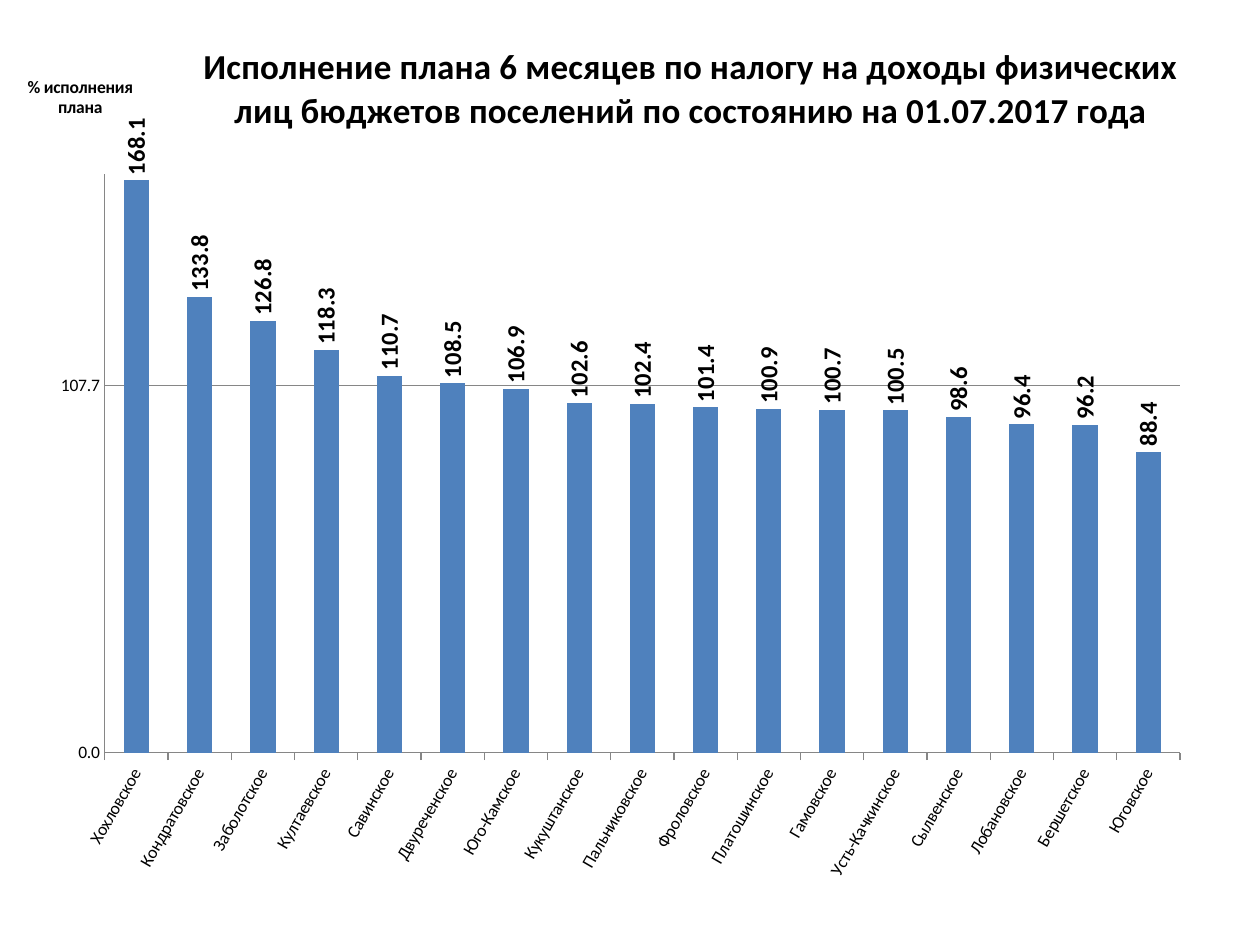
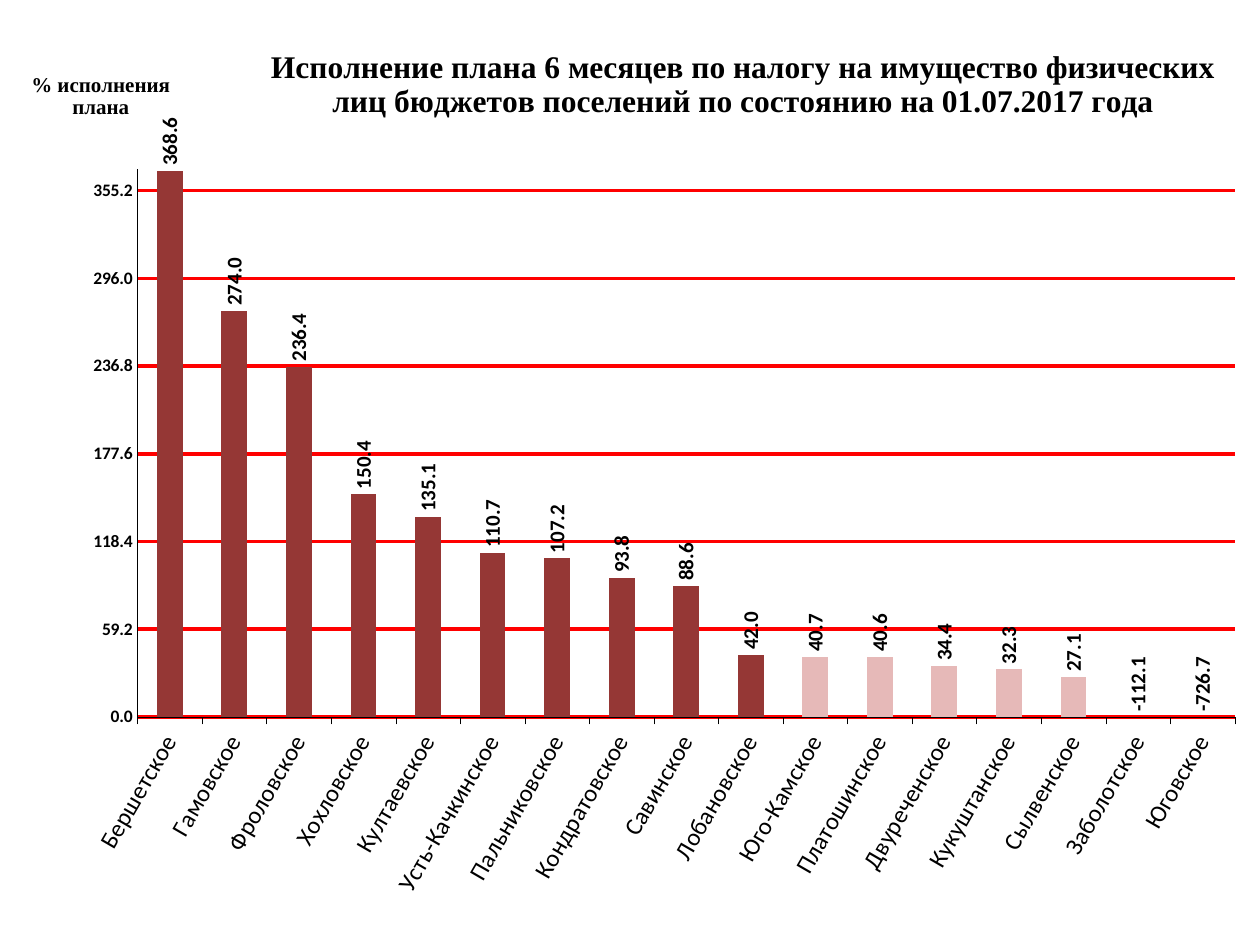
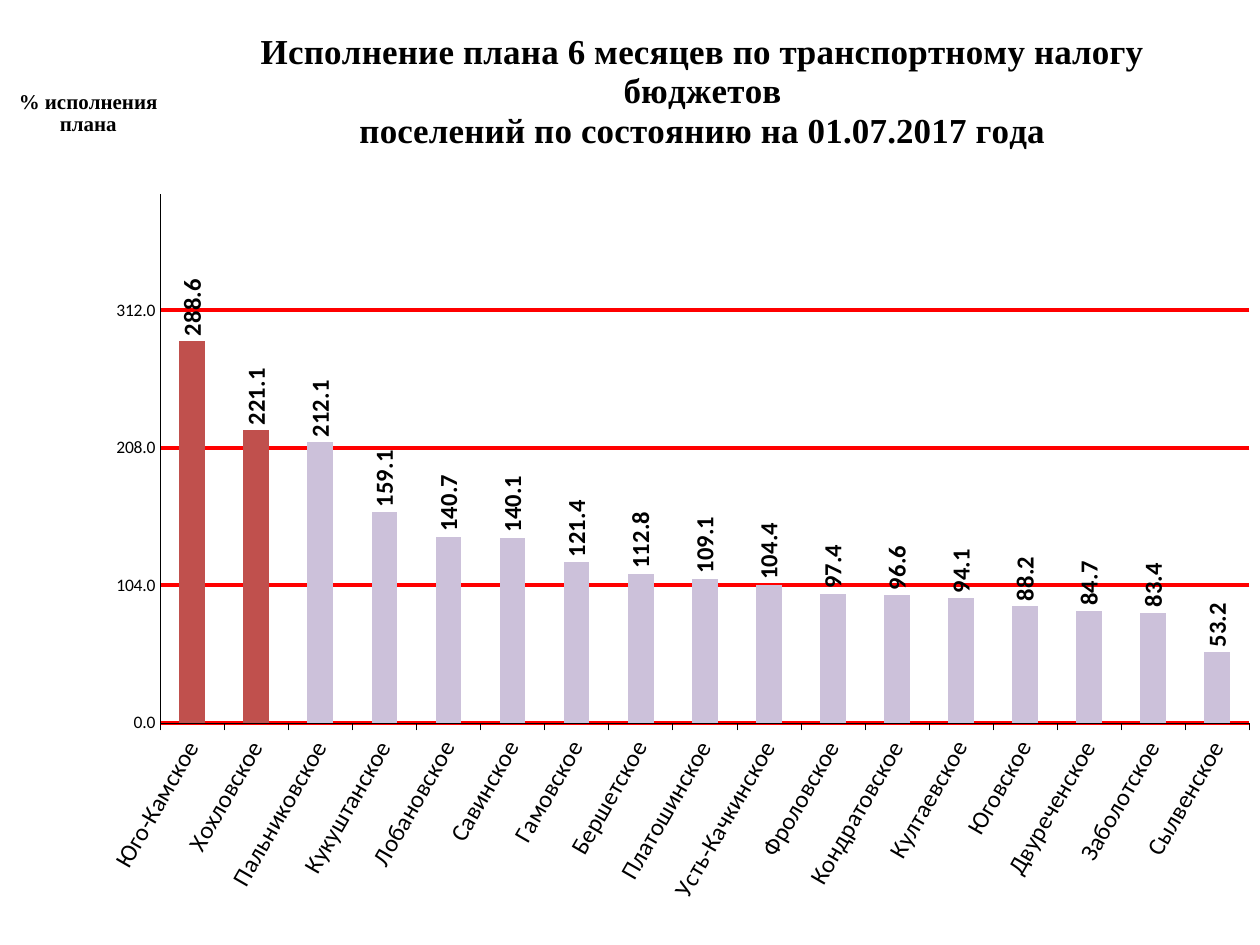
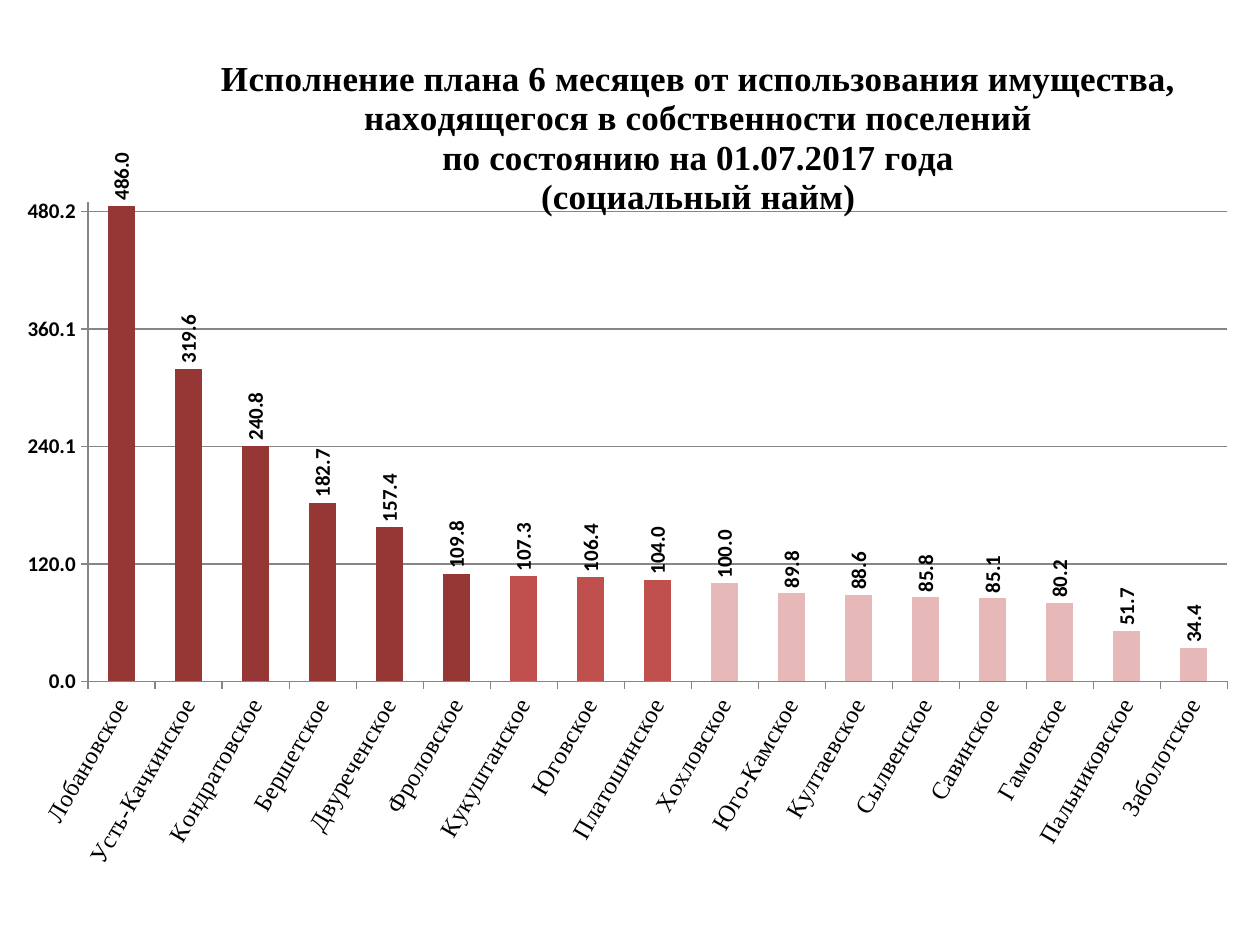
import pptx
import pptx.chart.data
import pptx.dml.color
import pptx.enum.chart
import pptx.oxml
import pptx.util
from dataclasses import dataclass
from itertools import chain, repeat
from typing import Optional

RGB = pptx.dml.color.RGBColor
Pt = pptx.util.Pt
Inches = pptx.util.Inches
Kind = pptx.enum.chart.XL_CHART_TYPE
Tick = pptx.enum.chart.XL_TICK_MARK
Side = pptx.enum.chart.XL_TICK_LABEL_POSITION
Spot = pptx.enum.chart.XL_LABEL_POSITION

BLACK = RGB(0, 0, 0)
GREY = RGB(0x86, 0x86, 0x86)
RED = RGB(0xFF, 0, 0)
BLUE = RGB(0x4F, 0x81, 0xBD)
DARK = RGB(0x95, 0x37, 0x35)
BRICK = RGB(0xC0, 0x50, 0x4D)
PINK = RGB(0xE6, 0xB9, 0xB8)
LILAC = RGB(0xCC, 0xC1, 0xDA)

SANS = "Calibri"
SERIF = "Times New Roman"
WIDE, HIGH = Inches(10), Inches(7.5)
UPRIGHT, SLANT, LEVEL = -90, -60, 0
UNIT = "% исполнения\nплана"


@dataclass(frozen=True)
class Head:
    """Text with its top left corner in percent of the chart."""
    text: str
    spot: tuple[float, float]
    size: float
    font: str = SERIF


@dataclass(frozen=True)
class Rule:
    """Colour and width in points of a line."""
    color: RGB = GREY
    width: float = 0.75


@dataclass(frozen=True)
class Graph:
    """One slide; box is in percent of the slide, plot in percent of the chart."""
    box: tuple[float, float, float, float]
    plot: tuple[float, float, float, float]
    title: Head
    names: str
    vals: tuple[float, ...]
    shades: tuple[tuple[int, RGB], ...]
    top: float
    step: float
    unit: Optional[Head] = None
    axis: Rule = Rule()
    grid: Rule = Rule()
    tick: Tick = Tick.NONE
    side: Side = Side.LOW
    form: str = "0.0"
    cat: tuple[float, str] = (14, SANS)
    scale: tuple[float, bool] = (10, False)
    label: float = 14


THIN = Rule(BLACK, 0.25)
BOLD = Rule(RED, 2)

GRAPHS = (
    Graph(
        box=(0.5, 0.4, 99, 99.33), plot=(7.9, 18.1, 86.2, 61.7),
        title=Head("Исполнение плана 6 месяцев по налогу на доходы физических\n"
                   "лиц бюджетов поселений по состоянию на 01.07.2017 года",
                   (15.5, 3.8), 20, SANS),
        unit=Head(UNIT, (1.4, 7.2), 10, SANS),
        names="Хохловское Кондратовское Заболотское Култаевское Савинское "
              "Двуреченское Юго-Камское Кукуштанское Пальниковское Фроловское "
              "Платошинское Гамовское Усть-Качкинское Сылвенское Лобановское "
              "Бершетское Юговское",
        vals=(168.1, 133.8, 126.8, 118.3, 110.7, 108.5, 106.9, 102.6, 102.4,
              101.4, 100.9, 100.7, 100.5, 98.6, 96.4, 96.2, 88.4),
        shades=((17, BLUE),), top=170, step=107.7, cat=(10, SANS)),
    Graph(
        box=(1.5, 1.33, 97.1, 97.2), plot=(9.7, 17, 89.7, 59.7),
        title=Head("Исполнение плана 6 месяцев по налогу на имущество физических\n"
                   "лиц бюджетов поселений по состоянию на 01.07.2017 года",
                   (20.3, 3.5), 18),
        unit=Head(UNIT, (0.7, 6), 12),
        names="Бершетское Гамовское Фроловское Хохловское Култаевское "
              "Усть-Качкинское Пальниковское Кондратовское Савинское "
              "Лобановское Юго-Камское Платошинское Двуреченское Кукуштанское "
              "Сылвенское Заболотское Юговское",
        vals=(368.6, 274, 236.4, 150.4, 135.1, 110.7, 107.2, 93.8, 88.6,
              42, 40.7, 40.6, 34.4, 32.3, 27.1, -112.1, -726.7),
        shades=((10, DARK), (7, PINK)), top=370, step=59.2,
        axis=THIN, grid=BOLD, scale=(10, True), label=12),
    Graph(
        box=(0.7, 0.53, 98.6, 98.93), plot=(12.2, 20.2, 87.8, 56.6),
        title=Head("Исполнение плана 6 месяцев по транспортному налогу\n"
                   "бюджетов\nпоселений по состоянию на 01.07.2017 года",
                   (20, 2.3), 20),
        unit=Head(UNIT, (0.5, 8.5), 12),
        names="Юго-Камское Хохловское Пальниковское Кукуштанское Лобановское "
              "Савинское Гамовское Бершетское Платошинское Усть-Качкинское "
              "Фроловское Кондратовское Култаевское Юговское Двуреченское "
              "Заболотское Сылвенское",
        vals=(288.6, 221.1, 212.1, 159.1, 140.7, 140.1, 121.4, 112.8, 109.1,
              104.4, 97.4, 96.6, 94.1, 88.2, 84.7, 83.4, 53.2),
        shades=((2, BRICK), (15, LILAC)), top=400, step=104,
        axis=THIN, grid=BOLD),
    Graph(
        box=(0, 3.87, 98.5, 94.53), plot=(7.1, 18.5, 91.8, 53.7),
        title=Head("Исполнение плана 6 месяцев от использования имущества,\n"
                   "находящегося в собственности поселений\n"
                   "по состоянию на 01.07.2017 года\n(социальный найм)",
                   (17.5, 1.9), 20),
        names="Лобановское Усть-Качкинское Кондратовское Бершетское "
              "Двуреченское Фроловское Кукуштанское Юговское Платошинское "
              "Хохловское Юго-Камское Култаевское Сылвенское Савинское "
              "Гамовское Пальниковское Заболотское",
        vals=(486, 319.6, 240.8, 182.7, 157.4, 109.8, 107.3, 106.4, 104,
              100, 89.8, 88.6, 85.8, 85.1, 80.2, 51.7, 34.4),
        shades=((6, DARK), (3, BRICK), (8, PINK)), top=490, step=120.04,
        tick=Tick.OUTSIDE, side=Side.NEXT_TO_AXIS, form="#,##0.0",
        cat=(14, SERIF), scale=(12, True), label=12),
)


def style(font, *, size: float, name: str = SANS, bold: bool = False) -> None:
    font.size, font.name, font.bold = Pt(size), name, bold
    font.color.rgb = BLACK


def write(frame, text: str, **form) -> None:
    """Fill a text frame, one paragraph a line."""
    for row, line in enumerate(text.split("\n")):
        para = frame.add_paragraph() if row else frame.paragraphs[0]
        run = para.add_run()
        run.text = line
        style(run.font, **form)


def turn(node, where: str, angle: int) -> None:
    """Rotate the text bodies found below a chart node."""
    for body in node.xpath(where + "//a:bodyPr"):
        body.set("rot", str(angle * 60000))
        body.set("vert", "horz")


def place(node, spots: tuple[float, ...], inner: bool = False) -> None:
    """Give a title or plot area a fixed layout in percent."""
    for old in node.xpath("./c:layout"):
        node.remove(old)
    keys = "xywh"[:len(spots)]
    target = '<c:layoutTarget val="inner"/>' if inner else ""
    modes = "".join(f'<c:{key}Mode val="edge"/>' for key in keys[:2])
    sizes = "".join(f'<c:{key} val="{spot / 100:.3f}"/>'
                    for key, spot in zip(keys, spots))
    layout = pptx.oxml.parse_xml(
        '<c:layout xmlns:c="http://schemas.openxmlformats.org/drawingml/2006/chart">'
        f"<c:manualLayout>{target}{modes}{sizes}</c:manualLayout></c:layout>")
    node.insert(len(node.xpath("./c:tx")), layout)


def caption(title, head: Head) -> None:
    write(title.text_frame, head.text, size=head.size, name=head.font, bold=True)
    turn(title.element, ".", LEVEL)
    place(title.element, head.spot)


def rule(line, look: Rule) -> None:
    line.color.rgb, line.width = look.color, Pt(look.width)


def axes(chart, graph: Graph) -> None:
    cat, val = chart.category_axis, chart.value_axis
    for axis in (cat, val):
        rule(axis.format.line, graph.axis)
        axis.minor_tick_mark = Tick.NONE
    cat.major_tick_mark = Tick.OUTSIDE
    cat.tick_label_position = graph.side
    size, name = graph.cat
    style(cat.tick_labels.font, size=size, name=name)
    turn(chart.element, ".//c:catAx/c:txPr", SLANT)

    val.minimum_scale, val.maximum_scale = 0, graph.top
    val.major_unit, val.major_tick_mark = graph.step, graph.tick
    val.has_major_gridlines = True
    rule(val.major_gridlines.format.line, graph.grid)
    size, bold = graph.scale
    style(val.tick_labels.font, size=size, bold=bold)
    val.tick_labels.number_format = graph.form
    val.tick_labels.number_format_is_linked = False
    if graph.unit:
        val.has_title = True
        caption(val.axis_title, graph.unit)


def bars(chart, graph: Graph) -> None:
    plot = chart.plots[0]
    plot.gap_width, plot.vary_by_categories = 150, False
    series = plot.series[0]
    series.invert_if_negative = False
    base = graph.shades[0][1]
    series.format.fill.solid()
    series.format.fill.fore_color.rgb = base
    tones = chain.from_iterable(repeat(tone, count) for count, tone in graph.shades)

    tags = series.data_labels
    tags.show_value, tags.position = True, Spot.OUTSIDE_END
    tags.number_format, tags.number_format_is_linked = "#,##0.0", False
    style(tags.font, size=graph.label, bold=True)

    for spot, (val, tone) in enumerate(zip(graph.vals, tones)):
        point = series.points[spot]
        if tone != base:
            point.format.fill.solid()
            point.format.fill.fore_color.rgb = tone
        if val < 0:  # keeps the label above the axis
            style(point.data_label.font, size=graph.label, bold=True)
            point.data_label.position = Spot.INSIDE_END
    turn(chart.element, ".//c:dLbls//c:txPr", UPRIGHT)


def draw(slide, graph: Graph) -> None:
    data = pptx.chart.data.CategoryChartData()
    data.categories = graph.names.split()
    data.add_series("% исполнения", graph.vals)
    left, top, width, height = (
        int(full * share / 100)
        for full, share in zip((WIDE, HIGH, WIDE, HIGH), graph.box))
    chart = slide.shapes.add_chart(
        Kind.COLUMN_CLUSTERED, left, top, width, height, data).chart
    style(chart.font, size=10)
    chart.has_legend = False
    chart.has_title = True
    caption(chart.chart_title, graph.title)
    axes(chart, graph)
    bars(chart, graph)
    place(chart.element.xpath(".//c:plotArea")[0], graph.plot, inner=True)


def main() -> None:
    deck = pptx.Presentation()
    deck.slide_width, deck.slide_height = WIDE, HIGH
    for graph in GRAPHS:
        draw(deck.slides.add_slide(deck.slide_layouts[6]), graph)
    deck.save("out.pptx")


if __name__ == "__main__":
    main()
